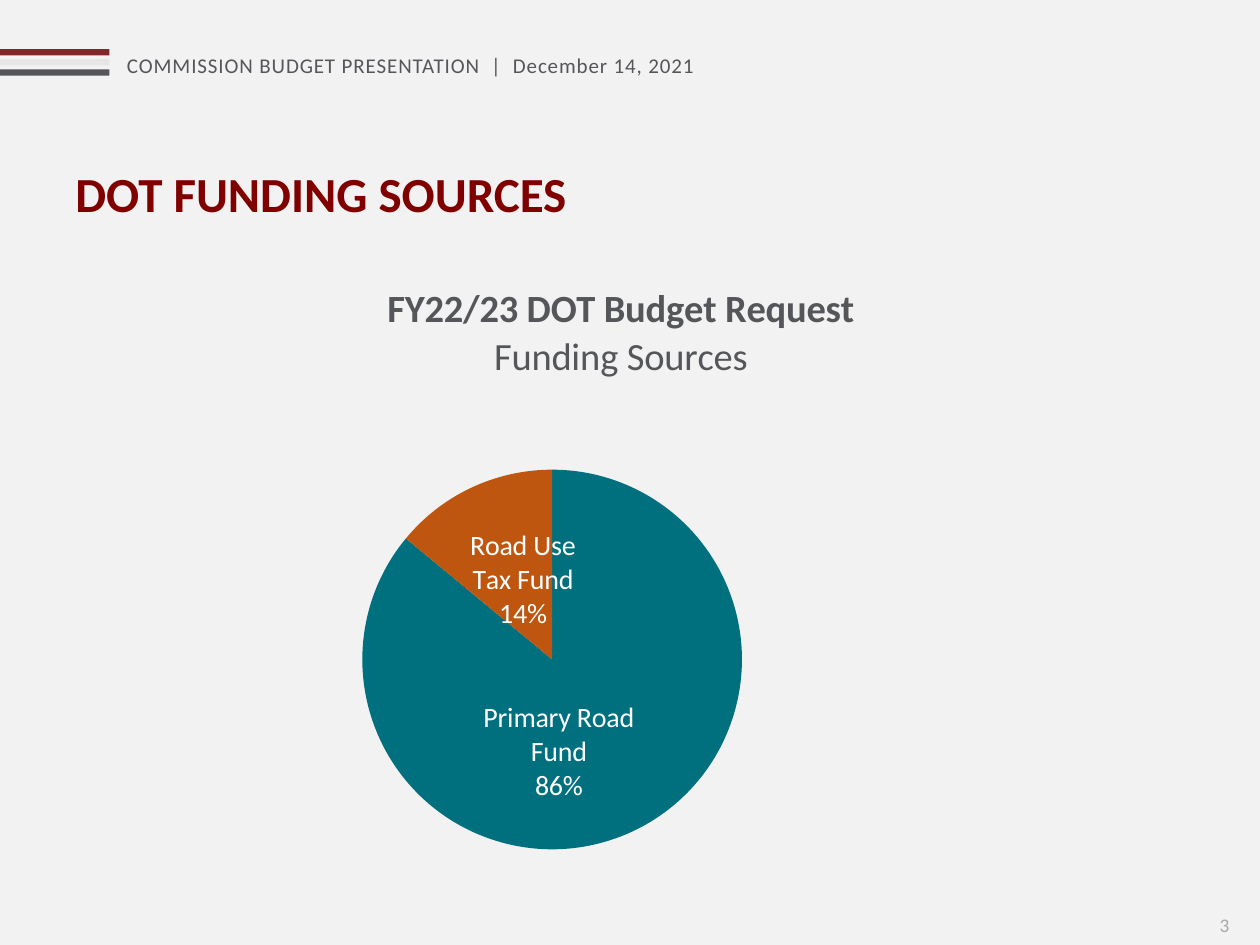
from pptx import Presentation
from pptx.chart.data import CategoryChartData
from pptx.dml.color import RGBColor
from pptx.enum.chart import XL_CHART_TYPE, XL_LABEL_POSITION
from pptx.enum.shapes import MSO_SHAPE
from pptx.oxml import parse_xml
from pptx.oxml.ns import nsdecls
from pptx.util import Pt

FONT = "Calibri"
COLORS = {
    "background": "F2F2F2", "maroon": "7F2629", "light": "E7E6E6",
    "slate": "54565A", "text": "55565A", "heading": "800000",
    "teal": "00707F", "orange": "BE560F", "white": "FFFFFF",
    "number": "A7A8A9",
}
FUNDS = [  # category, percent, colour, label lines, label offset
    ("Primary Road Fund", 86, "teal", ["Primary Road Fund", "86%"], (-0.03, 0.01)),
    ("Road Use Tax Fund", 14, "orange", ["Road Use", "Tax Fund", "14%"], (0.01, 0.01)),
]


def rgb(name):
    return RGBColor.from_string(COLORS[name])


def set_font(font, size, color, bold=False):
    font.name = FONT
    font.size = Pt(size)
    font.bold = bold
    font.color.rgb = rgb(color)


def add_text(slide, box, text, size, color, bold=False, spacing=0):
    """Add a one-line text box; spacing is in hundredths of a point."""
    tf = slide.shapes.add_textbox(*map(Pt, box)).text_frame
    tf.word_wrap = True
    p = tf.paragraphs[0]
    r = p.add_run()
    r.text = text
    set_font(p.font, size, color, bold)
    if spacing:
        r.font._element.set("spc", str(spacing))


def add_stripes(slide):
    for i, color in enumerate(("maroon", "light", "slate")):
        sp = slide.shapes.add_shape(
            MSO_SHAPE.RECTANGLE, 0, Pt(28.1 + 5.75 * i), Pt(62.5), Pt(3.6))
        sp.shadow.inherit = False
        sp.fill.solid()
        sp.fill.fore_color.rgb = rgb(color)
        sp.line.fill.background()


def fill_lines(tf, lines, size, color, bold_first=False):
    for i, line in enumerate(lines):
        p = tf.paragraphs[0] if i == 0 else tf.add_paragraph()
        r = p.add_run()
        r.text = line
        set_font(r.font, size, color, bold_first and i == 0)


def manual_layout(**values):
    """Return a chart layout element holding the given settings in order."""
    items = "".join(f'<c:{k} val="{v}"/>' for k, v in values.items())
    return parse_xml(f'<c:layout {nsdecls("c")}><c:manualLayout>{items}'
                     '</c:manualLayout></c:layout>')


def add_funding_pie(slide):
    data = CategoryChartData(number_format="0")
    data.categories = [fund[0] for fund in FUNDS]
    data.add_series("Series 1", [fund[1] for fund in FUNDS])
    chart = slide.shapes.add_chart(
        XL_CHART_TYPE.PIE, Pt(26.6), Pt(131.8), Pt(642.2), Pt(401.8), data).chart
    set_font(chart.font, 10, "slate")
    chart.has_legend = False
    chart.has_title = True
    title = chart.chart_title
    fill_lines(title.text_frame, ["FY22/23 DOT Budget Request", "Funding Sources"],
               22, "text", bold_first=True)
    title.include_in_layout = False
    for old in title._element.xpath("c:layout"):
        title._element.remove(old)
    title._element.xpath("c:tx")[0].addnext(
        manual_layout(xMode="edge", yMode="edge", x=0.3, y=0.07))

    plot_area = chart._chartSpace.xpath("c:chart/c:plotArea")[0]
    for old in plot_area.xpath("c:layout"):
        plot_area.remove(old)
    plot_area.insert(0, manual_layout(
        layoutTarget="inner", xMode="edge", yMode="edge",
        x=0.28, y=0.34, w=0.34, h=0.54))

    plot = chart.plots[0]
    plot.vary_by_categories = True
    for i, (_, _, color, lines, (dx, dy)) in enumerate(FUNDS):
        point = plot.series[0].points[i]
        point.format.fill.solid()
        point.format.fill.fore_color.rgb = rgb(color)
        point.format.line.fill.background()
        label = point.data_label
        fill_lines(label.text_frame, lines, 16, "white")
        label.position = XL_LABEL_POSITION.CENTER
        idx = plot.series[0]._element.xpath(f"c:dLbls/c:dLbl/c:idx[@val='{i}']")[0]
        idx.addnext(manual_layout(x=dx, y=dy))


def main():
    prs = Presentation()
    prs.slide_width, prs.slide_height = Pt(720), Pt(540)
    slide = prs.slides.add_slide(prs.slide_layouts[6])
    slide.background.fill.solid()
    slide.background.fill.fore_color.rgb = rgb("background")
    add_text(slide, (65.5, 26.6, 348.5, 36),
             "COMMISSION BUDGET PRESENTATION  |  December 14, 2021",
             12, "text", spacing=50)
    add_stripes(slide)
    add_text(slide, (36, 90, 411, 59), "DOT FUNDING SOURCES", 28, "heading", bold=True)
    add_funding_pie(slide)
    add_text(slide, (689.8, 518.4, 31.7, 64), "3", 11, "number")
    prs.save("out.pptx")


if __name__ == "__main__":
    main()
